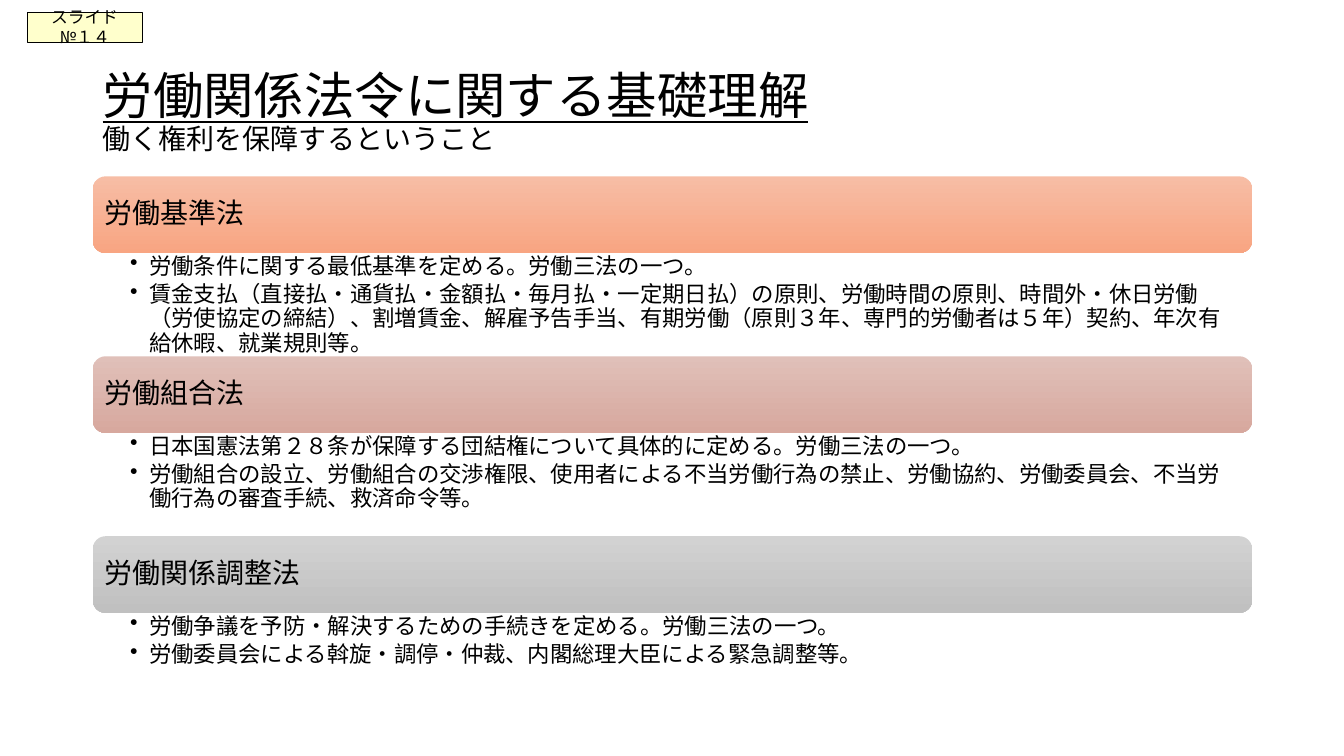
from pptx import Presentation
from pptx.dml.color import RGBColor
from pptx.enum.shapes import MSO_SHAPE as Shape
from pptx.enum.text import MSO_ANCHOR as Anchor, PP_ALIGN as Align
from pptx.oxml.ns import qn
from pptx.util import Inches, Pt
from lxml.etree import SubElement

FONT = "Noto Sans CJK JP"
COLORS = {"text": "000000", "tag": "FFFFCC"}
LEFT, WIDTH = Inches(0.92), Inches(11.5)
FIRST_TOP, STEP, BAR_HEIGHT = Inches(1.75), Inches(1.785), Inches(0.76)
INDENT = Inches(0.19)

LAWS = [
    ("労働基準法", "F7BDA5", "F8A582", [
        "労働条件に関する最低基準を定める。労働三法の一つ。",
        "賃金支払（直接払・通貨払・金額払・毎月払・一定期日払）の原則、労働時間の原則、時間外・休日労働（労使協定の締結）、割増賃金、解雇予告手当、有期労働（原則３年、専門的労働者は５年）契約、年次有給休暇、就業規則等。",
    ]),
    ("労働組合法", "E0C0B9", "D7A89E", [
        "日本国憲法第２８条が保障する団結権について具体的に定める。労働三法の一つ。",
        "労働組合の設立、労働組合の交渉権限、使用者による不当労働行為の禁止、労働協約、労働委員会、不当労働行為の審査手続、救済命令等。",
    ]),
    ("労働関係調整法", "D2D2D2", "C0C0C0", [
        "労働争議を予防・解決するための手続きを定める。労働三法の一つ。",
        "労働委員会による斡旋・調停・仲裁、内閣総理大臣による緊急調整等。",
    ]),
]


def style(paragraph, size, spacing=0.9, align=Align.LEFT):
    paragraph.alignment = align
    paragraph.line_spacing = spacing
    font = paragraph.font
    font.size = Pt(size)
    font.color.rgb = RGBColor.from_string(COLORS["text"])
    font.name = FONT
    properties = paragraph._p.pPr.find(qn("a:defRPr"))
    SubElement(properties, qn("a:ea"), typeface=FONT)


def set_margins(frame, left, top, right, bottom):
    frame.word_wrap = True
    frame.margin_left, frame.margin_top = Inches(left), Inches(top)
    frame.margin_right, frame.margin_bottom = Inches(right), Inches(bottom)


presentation = Presentation()
presentation.slide_width = Inches(13.33)
presentation.slide_height = Inches(7.5)
slide = presentation.slides.add_slide(presentation.slide_layouts[6])
shapes = slide.shapes

title = shapes.add_textbox(LEFT, Inches(0.4), WIDTH, Inches(1.45)).text_frame
title.word_wrap = True
title.vertical_anchor = Anchor.MIDDLE
heading = title.paragraphs[0]
style(heading, 20)
main_run = heading.add_run()
main_run.text = "労働関係法令に関する基礎理解"
main_run.font.size = Pt(36)
main_run.font.underline = True
heading.add_line_break()
heading.add_run().text = "働く権利を保障するということ"

for row, (law, light, dark, points) in enumerate(LAWS):
    top = FIRST_TOP + row * STEP
    bar = shapes.add_shape(Shape.ROUNDED_RECTANGLE, LEFT, top, WIDTH, BAR_HEIGHT)
    bar.shadow.inherit = False
    bar.line.fill.background()
    bar.fill.gradient()
    bar.fill.gradient_angle = 270
    for stop, color in zip(bar.fill.gradient_stops, (light, dark)):
        stop.color.rgb = RGBColor.from_string(color)
    set_margins(bar.text_frame, 0.08, 0.08, 0.08, 0.08)
    bar.text_frame.vertical_anchor = Anchor.MIDDLE
    bar.text_frame.text = law
    style(bar.text_frame.paragraphs[0], 20)

    body = shapes.add_textbox(LEFT, top + BAR_HEIGHT, WIDTH, STEP - BAR_HEIGHT).text_frame
    set_margins(body, 0.37, 0.02, 0.12, 0.02)
    body.text = "\n".join(points)
    for paragraph in body.paragraphs:
        paragraph.space_after = Pt(3)
        properties = paragraph._p.get_or_add_pPr()
        properties.set("marL", str(INDENT))
        properties.set("indent", str(-INDENT))
        SubElement(properties, qn("a:buChar"), char="•")
        style(paragraph, 16)

tag = shapes.add_shape(Shape.RECTANGLE, Inches(0.27), Inches(0.12), Inches(1.14), Inches(0.3))
tag.shadow.inherit = False
tag.fill.solid()
tag.fill.fore_color.rgb = RGBColor.from_string(COLORS["tag"])
tag.line.color.rgb = RGBColor.from_string(COLORS["text"])
tag.line.width = Pt(0.75)
tag.text_frame.word_wrap = True
tag.text_frame.vertical_anchor = Anchor.MIDDLE
tag.text_frame.text = "スライド№１４"
style(tag.text_frame.paragraphs[0], 12, spacing=1.0, align=Align.CENTER)

presentation.save("out.pptx")
